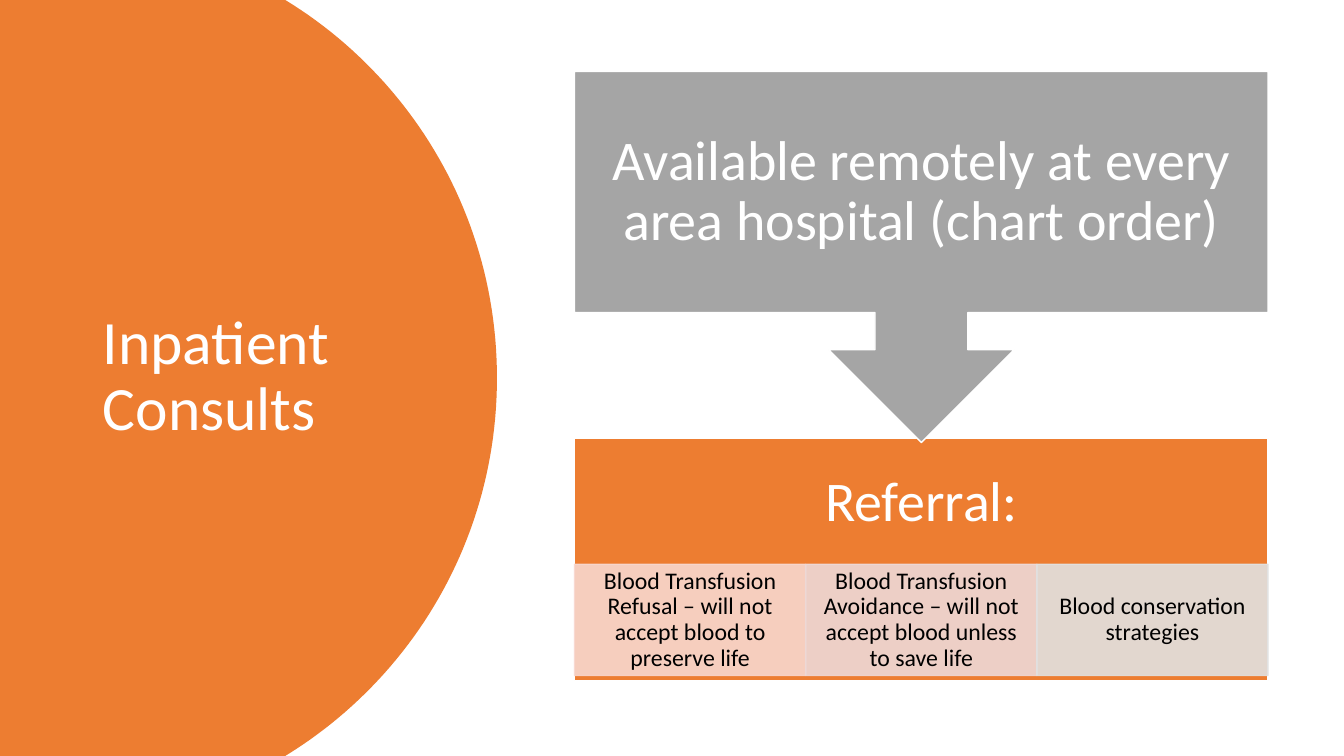
from dataclasses import dataclass

from pptx import Presentation
from pptx.dml.color import RGBColor
from pptx.enum.shapes import MSO_SHAPE as Preset
from pptx.enum.text import MSO_ANCHOR as Anchor, MSO_AUTO_SIZE as AutoSize, PP_ALIGN as Align
from pptx.oxml.xmlchemy import OxmlElement
from pptx.util import Pt


@dataclass(frozen=True)
class Theme:
    """Colours, font and type sizes of the slide."""
    font: str = "Calibri"
    orange: str = "ED7D31"
    grey: str = "A5A5A5"
    white: str = "FFFFFF"
    black: str = "000000"
    tints: tuple = ("F8D7CE", "EDD9D7", "E1E1E1")
    title: int = 44
    heading: int = 40
    detail: int = 17


THEME = Theme()
REASONS = (
    "Blood Transfusion Refusal – will not accept blood to preserve life",
    "Blood Transfusion Avoidance – will not accept blood unless to save life",
    "Blood conservation strategies",
)


def set_text(shape, text, size, colour, insets, align=Align.CENTER):
    """Fill a shape with one formatted paragraph; insets run left, top, right, bottom."""
    frame = shape.text_frame
    frame.text = text
    sides = ("margin_left", "margin_top", "margin_right", "margin_bottom")
    formats = dict(zip(sides, map(Pt, insets)))
    formats |= {"word_wrap": True, "auto_size": AutoSize.NONE, "vertical_anchor": Anchor.MIDDLE}
    for name, value in formats.items():
        setattr(frame, name, value)
    para = frame.paragraphs[0]
    para.alignment, para.line_spacing = align, 0.9
    for span in para.runs:
        for name, value in {"name": THEME.font, "size": Pt(size)}.items():
            setattr(span.font, name, value)
        span.font.color.rgb = RGBColor.from_string(colour)


def paint(shape, fill, line=None, opacity=100):
    """Give a shape a flat fill, an optional thin outline and no shadow."""
    shape.shadow.inherit = False
    shape.fill.solid()
    shape.fill.fore_color.rgb = RGBColor.from_string(fill)
    if line:
        shape.line.width = Pt(1)
        shape.line.color.rgb = RGBColor.from_string(line)
    else:
        shape.line.fill.background()
    if opacity < 100:
        for colour in shape.element.spPr.xpath(".//a:srgbClr"):
            alpha = OxmlElement("a:alpha")
            alpha.set("val", str(opacity * 1000))
            colour.append(alpha)


def add_block(page, preset, box, fill, line, opacity=100):
    """Add a painted preset shape in the given box."""
    shape = page.shapes.add_shape(preset, *map(Pt, box))
    paint(shape, fill, line, opacity)
    return shape


def curve(controls, steps=48):
    """Return points along a cubic curve."""
    weights = [((1 - t) ** 3, 3 * t * (1 - t) ** 2, 3 * t * t * (1 - t), t ** 3)
               for t in (step / steps for step in range(steps + 1))]
    return [tuple(sum(w * point[axis] for w, point in zip(row, controls)) for axis in (0, 1))
            for row in weights]


def add_title_panel(page, box):
    """Draw the rounded panel in the box and set the title on it."""
    left, top, width, height = box
    shoulder = left + width * 0.574
    upper = curve([(shoulder, top), (left + width * 0.83, top + height * 0.103),
                   (left + width, top + height * 0.288), (left + width, top + height / 2)])
    lower = [(x, 2 * top + height - y) for x, y in reversed(upper[:-1])]
    outline = page.shapes.build_freeform(Pt(left), Pt(top))
    outline.add_line_segments([(Pt(x), Pt(y)) for x, y in upper + lower + [(left, top + height)]])
    panel = outline.convert_to_shape()
    paint(panel, THEME.orange)
    title = page.shapes.title
    title.element.addprevious(panel.element)
    spots = {"left": left + 66.2, "top": top + 50.4, "width": 232.6, "height": height - 101.5}
    for name, value in spots.items():
        setattr(title, name, Pt(value))
    set_text(title, "Inpatient\vConsults", THEME.title, THEME.white, (7.2, 3.6, 7.2, 3.6), Align.LEFT)


def add_referral(page, box):
    """Draw the referral band with its row of reasons."""
    left, top, width, height = box
    band = add_block(page, Preset.RECTANGLE, box, THEME.orange, THEME.white)
    set_text(band, "Referral:", THEME.heading, THEME.white, (22.3, 22.3, 22.3, 22.3 + height * 0.46))
    cell_width = width / len(REASONS)
    for index, (reason, tint) in enumerate(zip(REASONS, THEME.tints)):
        cell_box = (left + index * cell_width, top + height * 0.52, cell_width, height * 0.46)
        cell = add_block(page, Preset.RECTANGLE, cell_box, tint, tint, opacity=90)
        set_text(cell, reason, THEME.detail, THEME.black, (9.4, 1.6, 9.4, 1.6))


def add_availability(page, box):
    """Draw the callout that points down, with its text in the upper part."""
    left, top, width, height = box
    callout = add_block(page, Preset.UP_ARROW_CALLOUT, box, THEME.grey, THEME.white)
    callout.rotation = 180
    label = page.shapes.add_textbox(*map(Pt, (left, top, width, height * 0.65)))
    set_text(label, "Available remotely at every area hospital (chart order)",
             THEME.heading, THEME.white, (22.3,) * 4)


def add_flow(page, box):
    """Place the callout above the referral band within the box."""
    left, top, width, height = box
    band_height = 172.8
    band_top = top + height - band_height
    add_referral(page, (left, band_top, width, band_height))
    add_availability(page, (left, top, width, band_top - top + 2.9))


def main():
    """Build and save the slide."""
    deck = Presentation()
    deck.slide_width, deck.slide_height = Pt(960), Pt(540)
    page = deck.slides.add_slide(deck.slide_layouts[5])
    add_title_panel(page, (0, 0, 355, 540))
    add_flow(page, (410.4, 51.1, 495.4, 434.9))
    deck.save("out.pptx")


if __name__ == "__main__":
    main()
